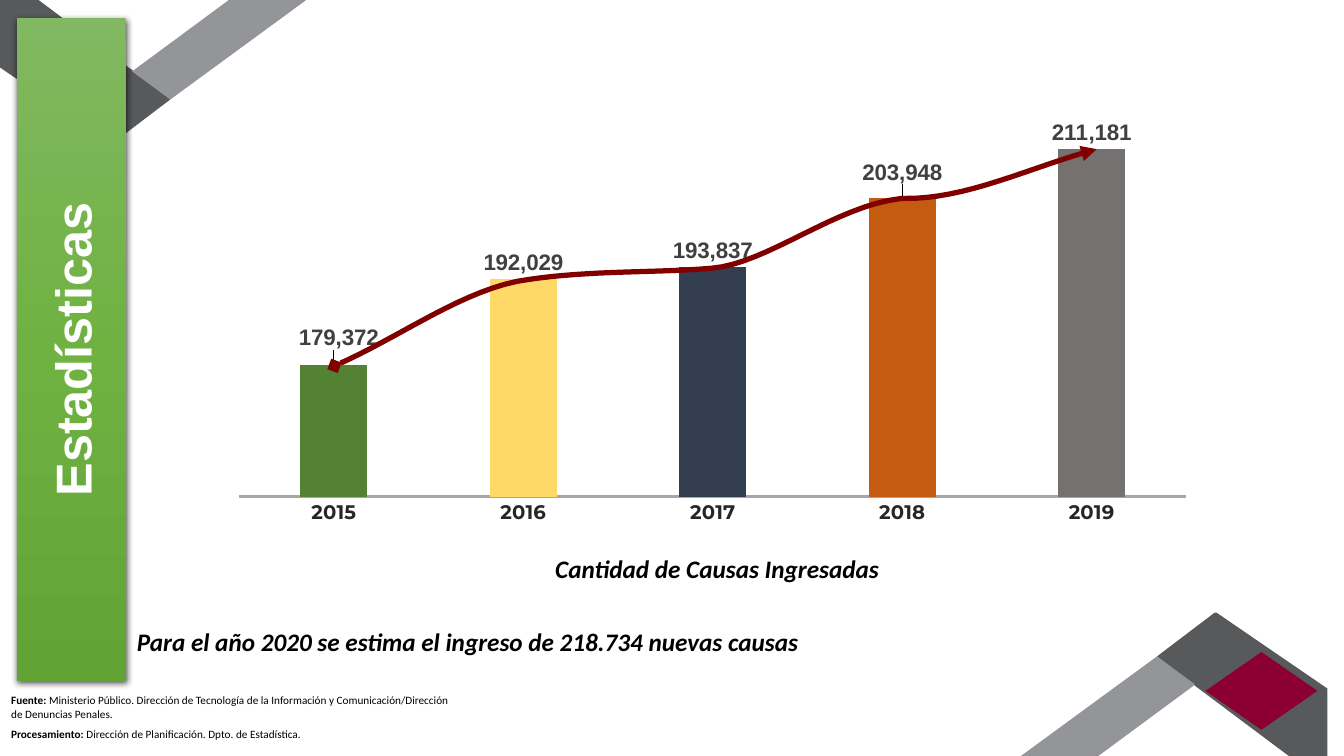
import copy
from lxml import etree
from pptx import Presentation
from pptx import util as u
from pptx.chart import data as chart_data
from pptx.dml.color import RGBColor
from pptx.enum import chart as chart_enum, shapes, text
from pptx.oxml import parse_xml
from pptx.oxml.ns import nsdecls, qn

WHITE = RGBColor(0xFF, 0xFF, 0xFF)
BLACK = RGBColor(0x00, 0x00, 0x00)
LIGHT_GREY = RGBColor(0x93, 0x95, 0x98)
DARK_GREY = RGBColor(0x58, 0x59, 0x5B)
MAROON = RGBColor(0x8B, 0x00, 0x30)
TREND_RED = RGBColor(0x80, 0x00, 0x00)
AXIS_GREY = RGBColor(0xA6, 0xA6, 0xA6)
YEAR_GREY = RGBColor(0x26, 0x26, 0x26)
LABEL_GREY = RGBColor(0x40, 0x40, 0x40)
BANNER_GREENS = [RGBColor(0x81, 0xB8, 0x61), RGBColor(0x6F, 0xB2, 0x42), RGBColor(0x62, 0xA3, 0x36)]
BAR_COLORS = [RGBColor(0x54, 0x82, 0x35), RGBColor(0xFF, 0xD9, 0x66), RGBColor(0x33, 0x3F, 0x50),
              RGBColor(0xC5, 0x5A, 0x11), RGBColor(0x76, 0x71, 0x71)]

presentation = Presentation()
presentation.slide_width = u.Cm(33.87)
presentation.slide_height = u.Cm(19.05)
slide = presentation.slides.add_slide(presentation.slide_layouts[6])


def add_outline(points, close):
    corners = [(u.Cm(x), u.Cm(y)) for x, y in points]
    builder = slide.shapes.build_freeform(*corners[0], scale=1.0)
    builder.add_line_segments(corners[1:], close=close)
    shape = builder.convert_to_shape()
    shape.shadow.inherit = False
    return shape


def set_font(font, name, size, color, bold=None, italic=None):
    font.name = name
    font.size = u.Pt(size)
    font.color.rgb = color
    font.bold = bold
    font.italic = italic


ribbons = [
    (LIGHT_GREY, [(7.72, 0), (5.77, 0), (3.33, 1.8), (4.29, 2.51)]),
    (DARK_GREY, [(0.97, 0), (0, 0), (0, 1.7), (2.79, 3.61), (2.84, 3.61),
                 (4.29, 2.51), (3.33, 1.8), (3.35, 1.78)]),
]
for color, top_points in ribbons:
    bottom_points = [(33.45 - x, 19.05 - y) for x, y in top_points]
    for points in (top_points, bottom_points):
        ribbon = add_outline(points, True)
        ribbon.fill.solid()
        ribbon.fill.fore_color.rgb = color
        ribbon.line.fill.background()

emblem = slide.shapes.add_shape(shapes.MSO_SHAPE.DIAMOND, u.Cm(30.38), u.Cm(16.43), u.Cm(2.82), u.Cm(1.96))
emblem.shadow.inherit = False
emblem.fill.solid()
emblem.fill.fore_color.rgb = MAROON
emblem.line.fill.background()

cases = chart_data.CategoryChartData(number_format="#,##0")
cases.categories = ["2015", "2016", "2017", "2018", "2019"]
cases.add_series("Causas", [179372, 192029, 193837, 203948, 211181])
chart = slide.shapes.add_chart(chart_enum.XL_CHART_TYPE.COLUMN_CLUSTERED, u.Cm(5.44), u.Cm(2.24),
                               u.Cm(24.51), u.Cm(11.48), cases).chart
chart.has_legend = False
chart.has_title = False
set_font(chart.font, "Calibri", 10, BLACK)

years = chart.category_axis
years.major_tick_mark = chart_enum.XL_TICK_MARK.NONE
years.format.line.color.rgb = AXIS_GREY
years.format.line.width = u.Pt(2.5)
set_font(years.tick_labels.font, "Montserrat", 14, YEAR_GREY, bold=True)
values = chart.value_axis
values.minimum_scale = 160000
values.maximum_scale = 220000
values.has_major_gridlines = False
values.visible = False

plot = chart.plots[0]
plot.gap_width = 182
plot.overlap = 43
plot.vary_by_categories = False
series = plot.series[0]
for index, color in enumerate(BAR_COLORS):
    bar = series.points[index].format.fill
    bar.solid()
    bar.fore_color.rgb = color
labels = series.data_labels
labels.show_value = True
labels.number_format = "#,##0"
labels.number_format_is_linked = False
labels.position = chart_enum.XL_LABEL_POSITION.OUTSIDE_END
set_font(labels.font, "Arial", 16, LABEL_GREY, bold=True)

for index, shift_x, shift_y in [(0, 0.005, -0.024), (3, 0, -0.02)]:
    label = series.points[index].data_label
    label.position = chart_enum.XL_LABEL_POSITION.OUTSIDE_END
    set_font(label.font, "Arial", 16, LABEL_GREY, bold=True)
    label_element = series._element.xpath(f'.//c:dLbl[c:idx/@val="{index}"]')[0]
    label_element.insert(1, parse_xml(
        f'<c:layout {nsdecls("c")}><c:manualLayout><c:x val="{shift_x}"/>'
        f'<c:y val="{shift_y}"/></c:manualLayout></c:layout>'))

plot_area = chart._chartSpace.xpath(".//c:plotArea")[0]
for old_layout in plot_area.findall(qn("c:layout")):
    plot_area.remove(old_layout)
plot_area.insert(0, parse_xml(
    f'<c:layout {nsdecls("c")}><c:manualLayout><c:layoutTarget val="inner"/>'
    '<c:xMode val="edge"/><c:yMode val="edge"/><c:x val="0.024"/><c:y val="0"/>'
    '<c:w val="0.974"/><c:h val="0.895"/></c:manualLayout></c:layout>'))

trend_points = [(8.43, 9.22)]
trend_curves = [
    [(10.08, 8.51), (11.73, 7.24), (13.34, 7.04)],
    [(14.91, 6.81), (16.56, 6.88), (17.93, 6.76)],
    [(19.33, 6.65), (21.06, 5.18), (22.73, 5.0)],
    [(24.33, 5.05), (26.01, 4.19), (27.64, 3.76)],
]
STEPS = 16
for curve in trend_curves:
    controls = [trend_points[-1], *curve]
    for step in range(1, STEPS + 1):
        t = step / STEPS
        weights = [(1 - t) ** 3, 3 * t * (1 - t) ** 2, 3 * t ** 2 * (1 - t), t ** 3]
        trend_points.append(tuple(sum(w * point[axis] for w, point in zip(weights, controls))
                                  for axis in (0, 1)))
trend = add_outline(trend_points, False)
trend.fill.background()
trend.line.color.rgb = TREND_RED
trend.line.width = u.Pt(3.75)
trend_line = trend._element.xpath(".//a:ln")[0]
etree.SubElement(trend_line, qn("a:headEnd"), type="diamond")
etree.SubElement(trend_line, qn("a:tailEnd"), type="triangle")

sources = [
    ("Fuente: ", "Ministerio Público. Dirección de Tecnología de la Información y "
                 "Comunicación/Dirección de Denuncias Penales.", 0.71),
    ("Procesamiento:", " Dirección de Planificación. Dpto. de Estadística.", 0.5),
]
table = slide.shapes.add_table(2, 1, u.Cm(0.25), u.Cm(17.45), u.Cm(11.33), u.Cm(1.21)).table
table.first_row = False
table.horz_banding = False
for index, (heading, detail, height) in enumerate(sources):
    table.rows[index].height = u.Cm(height)
    cell = table.cell(index, 0)
    cell.fill.solid()
    cell.fill.fore_color.rgb = WHITE
    cell.vertical_anchor = text.MSO_ANCHOR.BOTTOM
    cell.margin_left = cell.margin_right = cell.margin_top = u.Cm(0.03)
    cell.margin_bottom = 0
    paragraph = cell.text_frame.paragraphs[0]
    for words, bold in [(heading, True), (detail, False)]:
        run = paragraph.add_run()
        run.text = words
        set_font(run.font, "Calibri", 8, BLACK, bold=bold)

captions = [
    ("Para el año 2020 se estima el ingreso de 218.734 nuevas causas", 2.8, 15.65, 17.98),
    ("Cantidad de Causas Ingresadas", 11.28, 13.82, 13.59),
]
for words, left, top, width in captions:
    caption = slide.shapes.add_textbox(u.Cm(left), u.Cm(top), u.Cm(width), u.Cm(1.02))
    caption.text_frame.word_wrap = True
    paragraph = caption.text_frame.paragraphs[0]
    paragraph.text = words
    paragraph.alignment = text.PP_ALIGN.CENTER
    set_font(paragraph.font, "Calibri", 18, BLACK, bold=True, italic=True)

banner = slide.shapes.add_shape(shapes.MSO_SHAPE.RECTANGLE, u.Cm(0.43), u.Cm(0.46), u.Cm(2.74), u.Cm(16.69))
banner.line.fill.background()
banner.fill.gradient()
banner.fill.gradient_angle = 270
stop_list = banner._element.xpath(".//a:gsLst")[0]
stop_list.insert(1, copy.deepcopy(stop_list[0]))
for stop, color, position in zip(banner.fill.gradient_stops, BANNER_GREENS, (0, 0.5, 1)):
    stop.color.rgb = color
    stop.position = position
banner._element.spPr.append(parse_xml(
    f'<a:effectLst {nsdecls("a")}><a:outerShdw blurRad="57150" dist="19050" dir="5400000" '
    'algn="ctr" rotWithShape="0"><a:srgbClr val="000000"><a:alpha val="63000"/></a:srgbClr>'
    '</a:outerShdw></a:effectLst>'))
banner._element.xpath(".//a:bodyPr")[0].set("vert", "vert270")
paragraph = banner.text_frame.paragraphs[0]
paragraph.text = "Estadísticas"
paragraph.alignment = text.PP_ALIGN.CENTER
set_font(paragraph.font, "Arial", 36, WHITE, bold=True)

presentation.save("out.pptx")
